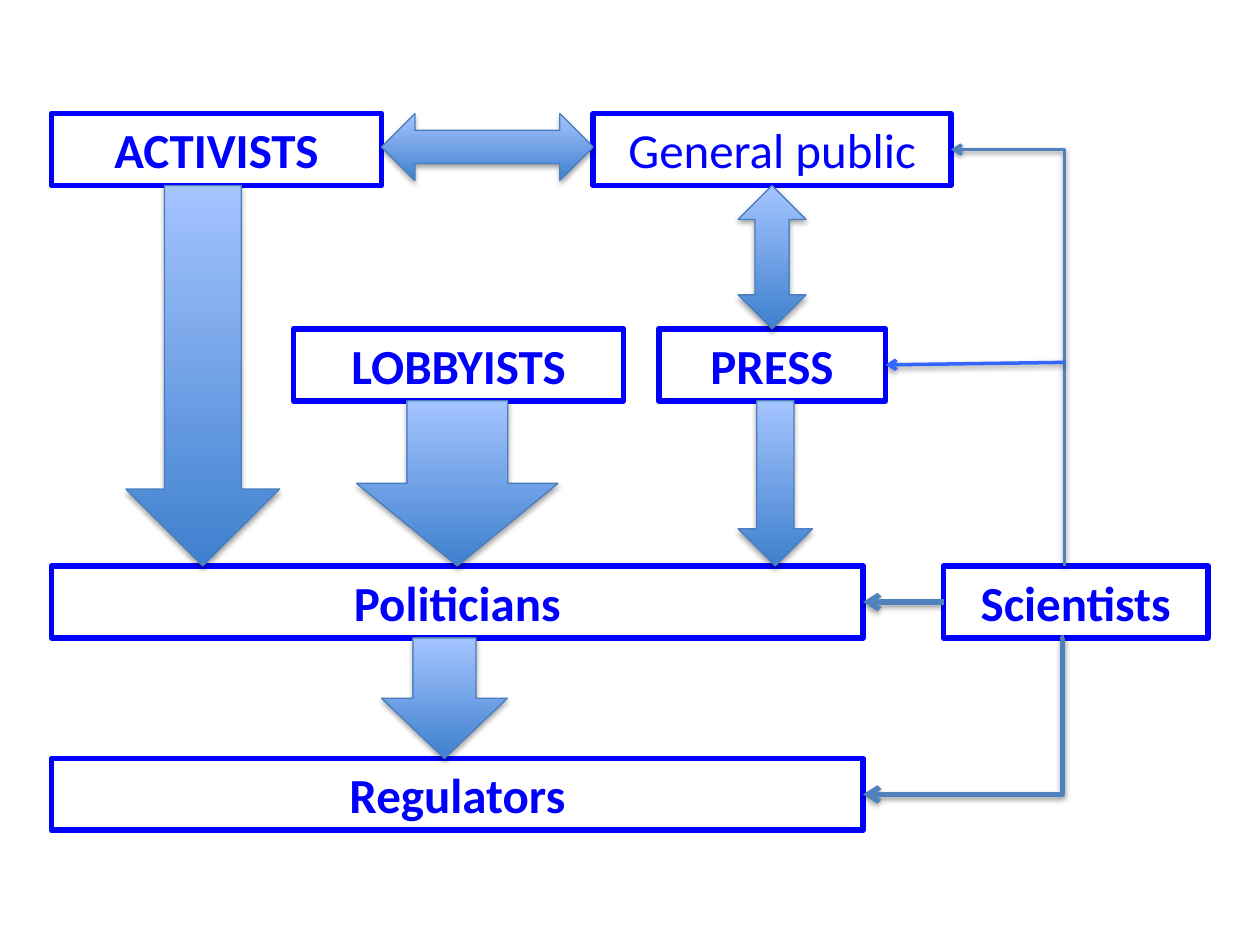
from lxml import etree
from pptx import Presentation
from pptx import util as u
from pptx.dml.color import RGBColor
from pptx.enum import shapes, text
from pptx.oxml import parse_xml
from pptx.oxml.ns import nsdecls, qn

BLUE = RGBColor(0x00, 0x00, 0xFF)
DARK = RGBColor(0x3F, 0x80, 0xCE)
LIGHT = RGBColor(0xA4, 0xC4, 0xFF)
EDGE = RGBColor(0x4B, 0x7E, 0xBC)
LINK = RGBColor(0x4F, 0x81, 0xBD)
PRESS_LINK = RGBColor(0x33, 0x66, 0xFF)
BLACK = RGBColor(0x00, 0x00, 0x00)

SHAPE = shapes.MSO_SHAPE
CONNECTOR = shapes.MSO_CONNECTOR
LEFT, RIGHT = 1, 3  # connection sites of a rectangle

BOX_H = 1.45
ROWS = [0, 4.34, 9.12, 13]  # tops of the four rows


def add_shadow(sp, dist, alpha):
    sp._element.spPr.append(parse_xml(
        f'<a:effectLst {nsdecls("a")}>'
        f'<a:outerShdw blurRad="{u.Pt(3.15)}" dist="{u.Pt(dist)}" dir="5400000" rotWithShape="0">'
        f'<a:srgbClr val="{BLACK}"><a:alpha val="{alpha * 1000}"/></a:srgbClr>'
        '</a:outerShdw></a:effectLst>'))


def add_box(s, label, x, y, w, bold=True):
    sp = s.shapes.add_shape(SHAPE.RECTANGLE, u.Cm(x), u.Cm(y), u.Cm(w), u.Cm(BOX_H))
    sp.shadow.inherit = False
    sp.fill.background()
    sp.line.color.rgb = BLUE
    sp.line.width = u.Pt(3.25)
    tf = sp.text_frame
    tf.word_wrap = True
    tf.auto_size = text.MSO_AUTO_SIZE.SHAPE_TO_FIT_TEXT
    tf.vertical_anchor = text.MSO_ANCHOR.TOP
    p = tf.paragraphs[0]
    p.text = label
    p.alignment = text.PP_ALIGN.CENTER
    p.font.name = "Calibri"
    p.font.size = u.Pt(28)
    p.font.bold = bold
    p.font.color.rgb = BLUE
    return sp


def add_arrow(s, kind, x, y, w, h):
    sp = s.shapes.add_shape(kind, u.Cm(x), u.Cm(y), u.Cm(w), u.Cm(h))
    sp.fill.gradient()
    sp.fill.gradient_angle = 90
    for stop, color, position in zip(sp.fill.gradient_stops, (DARK, LIGHT), (0, 1)):
        stop.color.rgb = color
        stop.position = position
    sp.line.color.rgb = EDGE
    sp.line.width = u.Pt(0.75)
    add_shadow(sp, 1.8, 35)


def add_link(s, kind, start, end, width, color=LINK, bend=None):
    c = s.shapes.add_connector(kind, *(u.Cm(v) for v in (*start, *end)))
    c.line.color.rgb = color
    c.line.width = u.Pt(width)
    etree.SubElement(c.line._get_or_add_ln(), qn("a:tailEnd"), type="arrow")
    if bend is not None:
        guides = c._element.spPr.find(qn("a:prstGeom")).get_or_add_avLst()
        etree.SubElement(guides, qn("a:gd"), name="adj1", fmla=f"val {bend}")
    add_shadow(c, 1.6, 38)
    return c


def influence_flow(s, left, top):
    """Boxes of the actors and the block arrows between them."""
    boxes = {}
    for label, x, row, w in [
        ("Regulators", 0, 3, 16.36),
        ("Politicians", 0, 2, 16.36),
        ("LOBBYISTS", 4.88, 1, 6.65),
        ("ACTIVISTS", 0, 0, 6.65),
        ("General public", 10.92, 0, 7.21),
        ("PRESS", 12.24, 1, 4.57),
    ]:
        boxes[label] = add_box(s, label, left + x, top + ROWS[row], w,
                               bold=label != "General public")

    # Activists and the public
    add_arrow(s, SHAPE.LEFT_RIGHT_ARROW, left + 6.65, top, 4.27, 1.35)

    # Vertical arrows fill the gap between two rows
    for kind, x, w, upper, lower in [
        (SHAPE.DOWN_ARROW, 6.15, 4.06, 1, 2),
        (SHAPE.DOWN_ARROW, 1.5, 3.1, 0, 2),
        (SHAPE.UP_DOWN_ARROW, 13.84, 1.37, 0, 1),
        (SHAPE.DOWN_ARROW, 13.84, 1.5, 1, 2),
        (SHAPE.DOWN_ARROW, 6.65, 2.54, 2, 3),
    ]:
        y = ROWS[upper] + BOX_H
        add_arrow(s, kind, left + x, top + y, w, ROWS[lower] - y)
    return boxes


def science_links(s, left, top, boxes):
    """Scientists box and its thin arrows to the other actors."""
    scientists = add_box(s, "Scientists", left + 17.98, top + ROWS[2], 5.33)
    trunk = left + 20.42
    middles = [top + y + BOX_H / 2 for y in ROWS]

    # Regulators
    add_link(s, CONNECTOR.ELBOW, (trunk, top + ROWS[2] + BOX_H),
             (left + 16.36, middles[3]), 3, bend=1100)

    # Politicians
    c = add_link(s, CONNECTOR.STRAIGHT, (left + 17.98, middles[2]),
                 (left + 16.36, middles[2]), 3)
    c.begin_connect(scientists, LEFT)
    c.end_connect(boxes["Politicians"], RIGHT)

    # General public
    add_link(s, CONNECTOR.ELBOW, (trunk, top + ROWS[2]),
             (left + 18.13, middles[0]), 2, bend=0)

    # Press
    c = add_link(s, CONNECTOR.STRAIGHT, (trunk, middles[1] - 0.05),
                 (left + 16.81, middles[1]), 2, PRESS_LINK)
    c.end_connect(boxes["PRESS"], RIGHT)


def main():
    prs = Presentation()
    prs.slide_width, prs.slide_height = u.Cm(25.4), u.Cm(19.05)
    s = prs.slides.add_slide(prs.slide_layouts[6])
    left, top = 1.04, 2.29
    boxes = influence_flow(s, left, top)
    science_links(s, left, top, boxes)
    prs.save("out.pptx")


if __name__ == "__main__":
    main()
